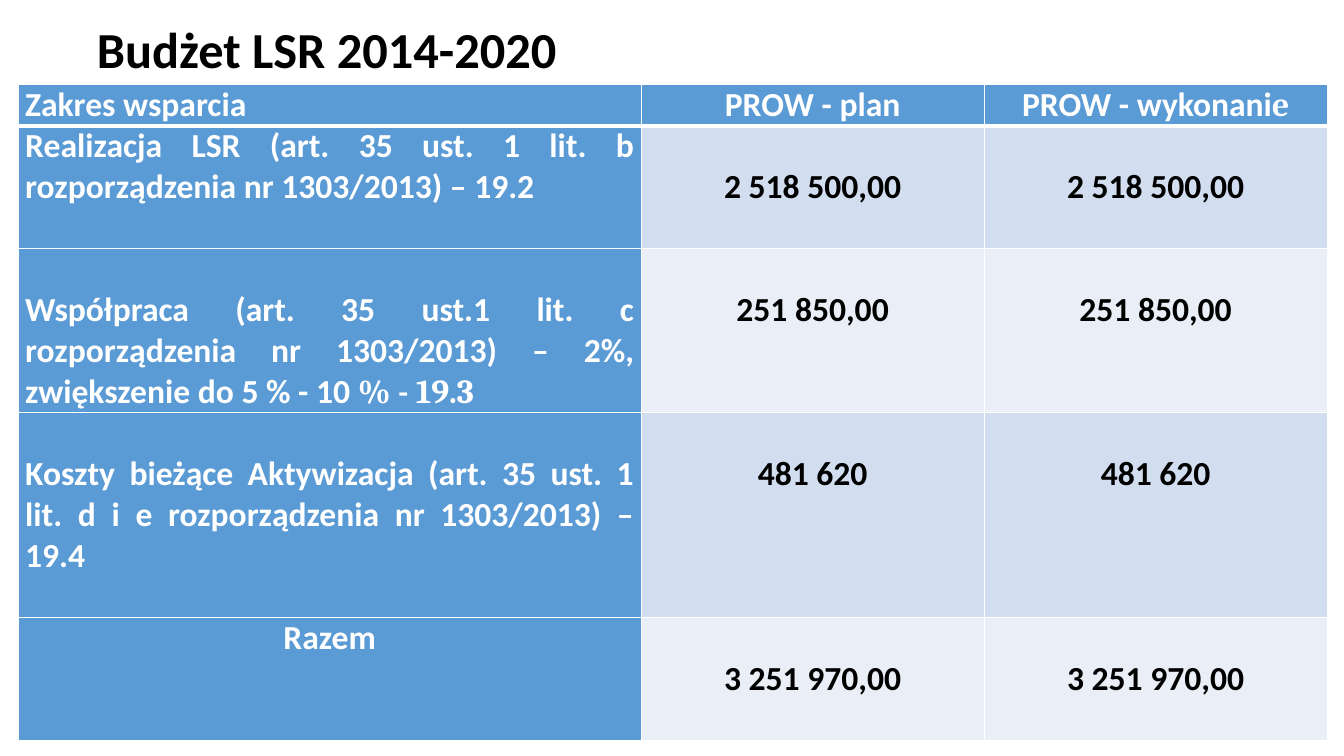
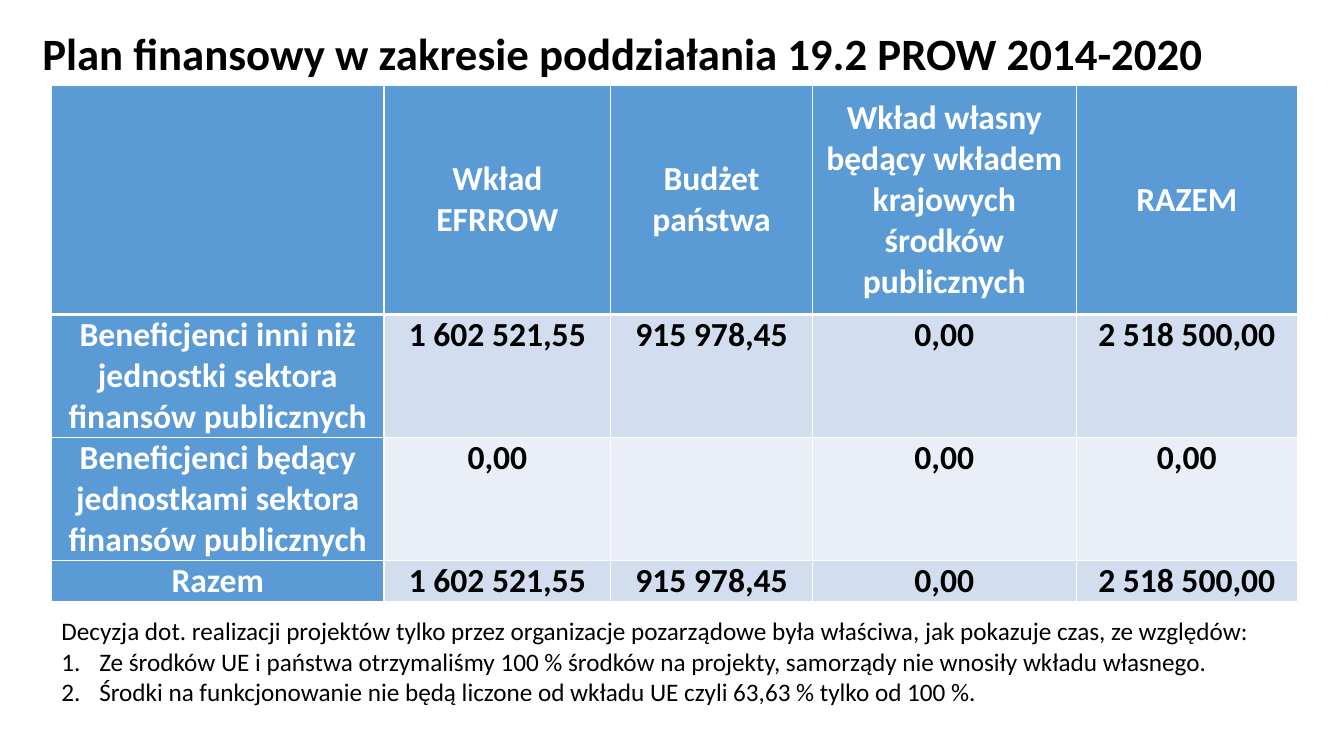
from dataclasses import dataclass, field

from lxml.etree import SubElement
from pptx import Presentation
from pptx.dml.color import RGBColor
from pptx.enum.text import MSO_ANCHOR as Anchor, MSO_AUTO_SIZE as AutoSize, PP_ALIGN as Align
from pptx.oxml import parse_xml
from pptx.oxml.ns import nsdecls, qn
from pptx.slide import Slide
from pptx.table import _Cell as TableCell
from pptx.util import Pt


@dataclass(frozen=True)
class Theme:
    black: RGBColor = RGBColor(0x00, 0x00, 0x00)
    white: RGBColor = RGBColor(0xFF, 0xFF, 0xFF)
    blue: RGBColor = RGBColor(0x5B, 0x9B, 0xD5)
    bands: tuple[RGBColor, RGBColor] = (RGBColor(0xD2, 0xDE, 0xEF), RGBColor(0xEA, 0xEF, 0xF7))
    font: str = "Calibri"
    serif: str = "Cambria"
    cell_size: float = 24
    note_size: float = 18
    line_height: float = 29.3
    cell_inset: float = 5
    rule: float = 1
    header_rule: float = 3


@dataclass(frozen=True)
class Box:
    left: float
    top: float
    width: float
    height: float


@dataclass(frozen=True)
class Title:
    text: str
    box: Box
    size: float
    wrap: bool = True


@dataclass(frozen=True)
class Entry:
    text: str = ""
    serif_tail: str = ""
    align: Align = Align.CENTER
    anchor: Anchor = Anchor.TOP
    lead_lines: int = 0


@dataclass(frozen=True)
class Grid:
    left: float
    top: float
    columns: list[float]
    heights: list[float]
    rows: list[list[Entry]] = field(default_factory=list)


THEME = Theme()


def style(paragraph, size: float, color: RGBColor, bold: bool = False) -> None:
    font = paragraph.font
    font.name, font.size, font.bold = THEME.font, Pt(size), bold
    font.color.rgb = color


def draw_title(slide: Slide, title: Title) -> None:
    heading = slide.shapes.title
    box = title.box
    heading.left, heading.top = Pt(box.left), Pt(box.top)
    heading.width, heading.height = Pt(box.width), Pt(box.height)
    frame = heading.text_frame
    frame.text = title.text
    frame.word_wrap = title.wrap
    frame.auto_size = AutoSize.NONE
    frame.vertical_anchor = Anchor.TOP
    frame.paragraphs[0].alignment = Align.LEFT
    style(frame.paragraphs[0], title.size, THEME.black, True)


def draw_borders(cell: TableCell, row: int) -> None:
    widths = {
        "lnL": THEME.rule,
        "lnR": THEME.rule,
        "lnT": THEME.header_rule if row == 1 else THEME.rule,
        "lnB": THEME.header_rule if row == 0 else THEME.rule,
    }
    properties = cell._tc.get_or_add_tcPr()
    for position, (side, width) in enumerate(widths.items()):
        properties.insert(position, parse_xml(
            f'<a:{side} {nsdecls("a")} w="{Pt(width)}"><a:solidFill>'
            f'<a:srgbClr val="{THEME.white}"/></a:solidFill></a:{side}>'))


def fill_cell(cell: TableCell, entry: Entry, row: int, column: int) -> None:
    heading = row == 0 or column == 0
    cell.fill.solid()
    cell.fill.fore_color.rgb = THEME.blue if heading else THEME.bands[(row - 1) % 2]
    draw_borders(cell, row)
    cell.margin_left = cell.margin_right = Pt(THEME.cell_inset)
    cell.margin_top = Pt(entry.lead_lines * THEME.line_height)
    cell.margin_bottom = Pt(0)
    cell.vertical_anchor = entry.anchor
    cell.text_frame.text = entry.text
    for paragraph in cell.text_frame.paragraphs:
        paragraph.alignment = entry.align
        style(paragraph, THEME.cell_size, THEME.white if heading else THEME.black, True)
    if entry.serif_tail:
        tail = cell.text_frame.paragraphs[-1].add_run()
        tail.text = entry.serif_tail
        tail.font.name = THEME.serif


def draw_grid(slide: Slide, grid: Grid) -> None:
    table = slide.shapes.add_table(
        len(grid.rows), len(grid.columns), Pt(grid.left), Pt(grid.top),
        Pt(sum(grid.columns)), Pt(sum(grid.heights))).table
    table.first_col = True
    table.horz_banding = False
    for column, width in zip(table.columns, grid.columns):
        column.width = Pt(width)
    for row, height in zip(table.rows, grid.heights):
        row.height = Pt(height)
    for row, entries in enumerate(grid.rows):
        for column, entry in enumerate(entries):
            fill_cell(table.cell(row, column), entry, row, column)


def draw_note(slide: Slide, box: Box, intro: str, reasons: list[str]) -> None:
    frame = slide.shapes.add_textbox(
        Pt(box.left), Pt(box.top), Pt(box.width), Pt(box.height)).text_frame
    frame.word_wrap = True
    frame.text = "\n".join([intro, *reasons])
    for number, paragraph in enumerate(frame.paragraphs):
        if number:
            properties = paragraph._p.get_or_add_pPr()
            properties.set("marL", str(Pt(27)))
            properties.set("indent", str(Pt(-27)))
            SubElement(properties, qn("a:buFont"), typeface="+mj-lt")
            SubElement(properties, qn("a:buAutoNum"), type="arabicPeriod")
        style(paragraph, THEME.note_size, THEME.black)


def budget_row(label: Entry, amount: str) -> list[Entry]:
    return [label, *[Entry(amount, lead_lines=1)] * 2]


def plan_row(label: str, *amounts: str) -> list[Entry]:
    return [Entry(label, anchor=Anchor.MIDDLE), *map(Entry, amounts)]


BUDGET_TITLE = Title("Budżet LSR 2014-2020", Box(62, 9.4, 346, 51), 36, wrap=False)
BUDGET = Grid(
    13, 60.5, [445, 245, 245],
    [lines * THEME.line_height for lines in (1, 3, 4, 5, 3)],
    [
        [Entry("Zakres wsparcia", align=Align.JUSTIFY), Entry("PROW - plan"),
         Entry("PROW - wykonani", "e")],
        budget_row(Entry("Realizacja LSR (art. 35 ust. 1 lit. b rozporządzenia nr 1303/2013) – 19.2",
                         align=Align.JUSTIFY), "2 518 500,00"),
        budget_row(Entry("Współpraca (art. 35 ust.1 lit. c rozporządzenia nr 1303/2013) – 2%, "
                         "zwiększenie do 5 % - 10 ", "% - 19.3", Align.JUSTIFY, lead_lines=1),
                   "251 850,00"),
        budget_row(Entry("Koszty bieżące Aktywizacja (art. 35 ust. 1 lit. d i e rozporządzenia "
                         "nr 1303/2013) – 19.4", align=Align.JUSTIFY, lead_lines=1), "481 620"),
        budget_row(Entry("Razem"), "3 251 970,00"),
    ],
)

PLAN_TITLE = Title("Plan finansowy w zakresie poddziałania 19.2 PROW 2014-2020",
                   Box(23, 15, 937, 46), 32)
PLAN_HEADINGS = [
    "", "Wkład\nEFRROW", "Budżet\npaństwa",
    "Wkład własny będący wkładem krajowych środków publicznych", "RAZEM",
]
PLAN_TOTALS = ("1 602 521,55", "915 978,45", "0,00", "2 518 500,00")
PLAN = Grid(
    36.8, 61.2, [237.5, 162, 144, 188.5, 158], [163.4, 86.4, 86.4, 28.8],
    [
        [Entry(heading, anchor=Anchor.MIDDLE) for heading in PLAN_HEADINGS],
        plan_row("Beneficjenci inni niż jednostki sektora finansów publicznych", *PLAN_TOTALS),
        plan_row("Beneficjenci będący jednostkami sektora finansów publicznych",
                 "0,00", "", "0,00", "0,00"),
        plan_row("Razem", *PLAN_TOTALS),
    ],
)
DECISION = ("Decyzja dot. realizacji projektów tylko przez organizacje pozarządowe była właściwa, "
            "jak pokazuje czas, ze względów:")
REASONS = [
    "Ze środków UE i państwa otrzymaliśmy 100 % środków na projekty, "
    "samorządy nie wnosiły wkładu własnego.",
    "Środki na funkcjonowanie nie będą liczone od wkładu UE czyli 63,63 % tylko od 100 %.",
]


def main() -> None:
    deck = Presentation()
    deck.slide_width, deck.slide_height = Pt(960), Pt(540)
    title_only = deck.slide_layouts[5]

    budget_slide = deck.slides.add_slide(title_only)
    draw_title(budget_slide, BUDGET_TITLE)
    draw_grid(budget_slide, BUDGET)

    plan_slide = deck.slides.add_slide(title_only)
    draw_title(plan_slide, PLAN_TITLE)
    draw_grid(plan_slide, PLAN)
    draw_note(plan_slide, Box(36.8, 436.3, 898, 73), DECISION, REASONS)

    deck.save("out.pptx")


if __name__ == "__main__":
    main()
